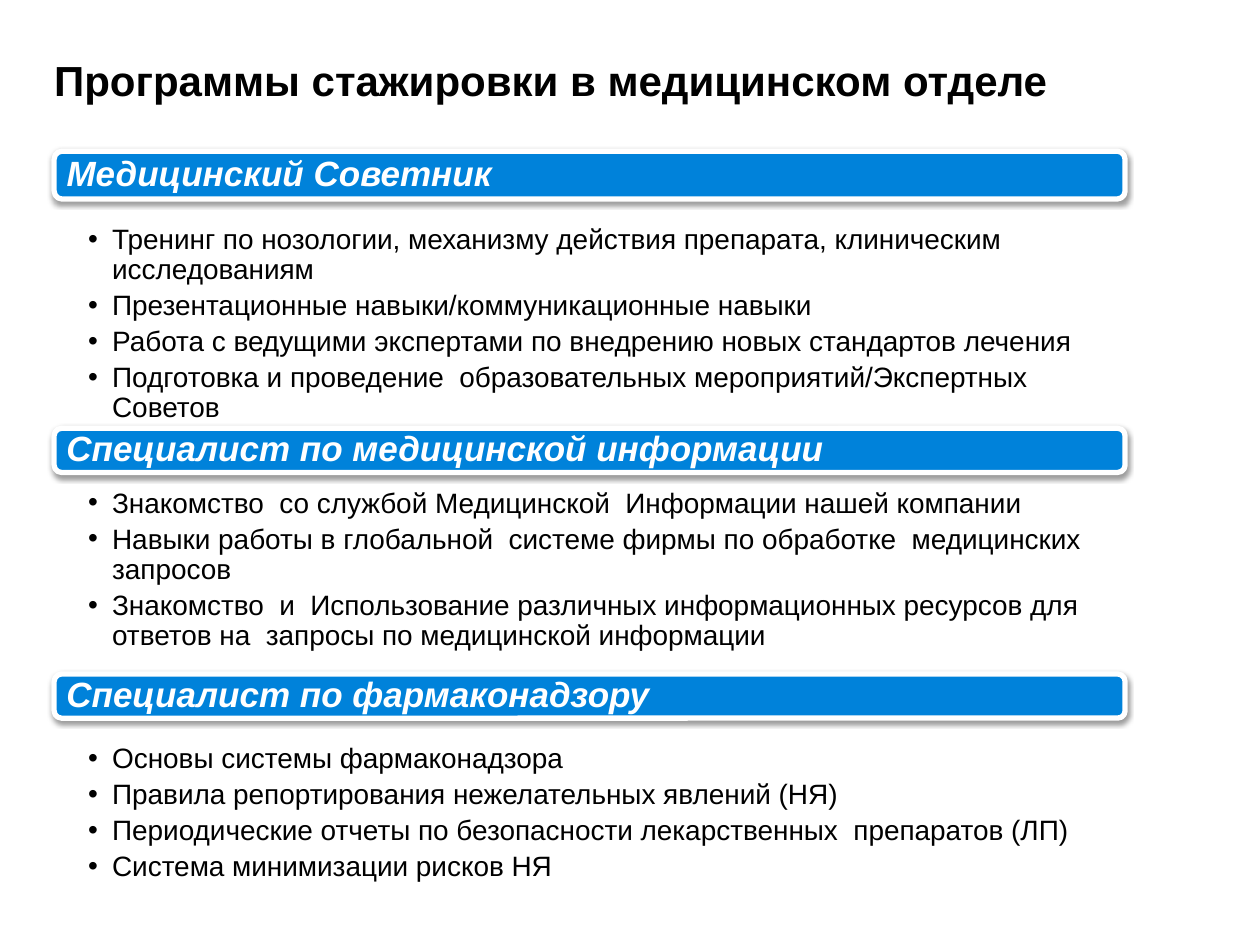
from dataclasses import dataclass

from lxml import etree
from pptx import Presentation
from pptx.dml.color import RGBColor
from pptx.enum.shapes import MSO_SHAPE
from pptx.enum.text import MSO_ANCHOR, MSO_AUTO_SIZE, PP_ALIGN
from pptx.oxml.ns import qn
from pptx.slide import Slide
from pptx.text.text import TextFrame, _Paragraph
from pptx.util import Inches, Pt

ROUNDED = MSO_SHAPE.ROUNDED_RECTANGLE
TOP, MIDDLE = MSO_ANCHOR.TOP, MSO_ANCHOR.MIDDLE
LEFT = PP_ALIGN.LEFT
NO_AUTOFIT = MSO_AUTO_SIZE.NONE
FONT = "Arial"
COLORS = {"text": "000000", "bar": "0082DA", "light": "FFFFFF", "shadow": "000000"}
SLIDE_WIDTH, SLIDE_HEIGHT = Inches(10), Inches(7.5)
MARGIN, CONTENT_WIDTH = 4.3, 85
HANGING = Inches(0.19)


@dataclass
class Section:
    """A heading bar and its bullets, with lengths in percent of slide height."""

    heading: str
    bar_top: float
    bar_height: float
    list_top: float
    list_height: float
    bullets: list[str]


SECTIONS = [
    Section("Медицинский Советник", 16, 5.07, 23.6, 19.33, [
        "Тренинг по нозологии, механизму действия препарата, клиническим исследованиям",
        "Презентационные навыки/коммуникационные навыки",
        "Работа с ведущими экспертами по внедрению новых стандартов лечения",
        "Подготовка и проведение  образовательных мероприятий/Экспертных Советов",
    ]),
    Section("Специалист по медицинской информации", 45.33, 4.67, 51.47, 18.67, [
        "Знакомство  со службой Медицинской  Информации нашей компании",
        "Навыки работы в глобальной  системе фирмы по обработке  медицинских запросов",
        "Знакомство  и  Использование различных информационных ресурсов для "
        "ответов на  запросы по медицинской информации",
    ]),
    Section("Специалист по фармаконадзору", 71.33, 4.67, 78.53, 16.27, [
        "Основы системы фармаконадзора",
        "Правила репортирования нежелательных явлений (НЯ)",
        "Периодические отчеты по безопасности лекарственных  препаратов (ЛП)",
        "Система минимизации рисков НЯ",
    ]),
]


def color(name: str) -> RGBColor:
    """Look up a palette colour."""
    return RGBColor.from_string(COLORS[name])


def area(top: float, height: float, width: float = CONTENT_WIDTH) -> tuple[int, ...]:
    """Turn percentages into a left, top, width, height tuple at the margin."""
    return (
        int(SLIDE_WIDTH * MARGIN / 100),
        int(SLIDE_HEIGHT * top / 100),
        int(SLIDE_WIDTH * width / 100),
        int(SLIDE_HEIGHT * height / 100),
    )


def set_frame(frame: TextFrame, anchor: MSO_ANCHOR, left: float, right: float, vertical: float) -> None:
    """Set wrapping, anchor and insets in inches."""
    frame.word_wrap = True
    frame.auto_size = NO_AUTOFIT
    frame.vertical_anchor = anchor
    frame.margin_left, frame.margin_right = Inches(left), Inches(right)
    frame.margin_top = frame.margin_bottom = Inches(vertical)


def format_paragraph(paragraph: _Paragraph, size: float, color_name: str, bold: bool = False,
                     italic: bool = False, line_spacing: float = 0.9) -> None:
    """Align a paragraph and style its runs."""
    paragraph.alignment = LEFT
    paragraph.line_spacing = line_spacing
    for run in paragraph.runs:
        run.font.name = FONT
        run.font.size = Pt(size)
        run.font.bold = bold
        run.font.italic = italic
        run.font.color.rgb = color(color_name)


def add_bullet(paragraph: _Paragraph) -> None:
    """Give a paragraph a hanging bullet."""
    properties = paragraph._p.get_or_add_pPr()
    properties.set("marL", str(HANGING))
    properties.set("indent", str(-HANGING))
    etree.SubElement(properties, qn("a:buFont"), typeface=FONT)
    etree.SubElement(properties, qn("a:buChar"), char="•")


def add_title(slide: Slide, text: str) -> None:
    """Fill and place the title placeholder."""
    title = slide.shapes.title
    title.left, title.top, title.width, title.height = area(5.73, 8.4, 80.6)
    title.text_frame.text = text
    set_frame(title.text_frame, TOP, 0, 0, 0)
    format_paragraph(title.text_frame.paragraphs[0], 24, "text", bold=True, line_spacing=1.0)


def add_bar(slide: Slide, section: Section) -> None:
    """Draw a heading bar with a soft shadow below it."""
    bar = slide.shapes.add_shape(ROUNDED, *area(section.bar_top, section.bar_height))
    bar.fill.solid()
    bar.fill.fore_color.rgb = color("bar")
    bar.line.color.rgb = color("light")
    bar.line.width = Pt(3)
    bar.shadow.inherit = False
    effects = bar._element.spPr.find(qn("a:effectLst"))
    shadow = etree.SubElement(effects, qn("a:outerShdw"), blurRad=str(Pt(3.1)),
                              dist=str(Pt(1.6)), dir="5400000", rotWithShape="0")
    tint = etree.SubElement(shadow, qn("a:srgbClr"), val=COLORS["shadow"])
    etree.SubElement(tint, qn("a:alpha"), val="38000")
    bar.text_frame.text = section.heading
    set_frame(bar.text_frame, MIDDLE, 0.08, 0.08, 0)
    format_paragraph(bar.text_frame.paragraphs[0], 20, "light", bold=True, italic=True)


def add_list(slide: Slide, section: Section) -> None:
    """Write the bullets of a section."""
    box = slide.shapes.add_textbox(*area(section.list_top, section.list_height))
    frame = box.text_frame
    set_frame(frame, TOP, 0.27, 0.12, 0.02)
    frame.text = "\n".join(section.bullets)
    for paragraph in frame.paragraphs:
        add_bullet(paragraph)
        paragraph.space_after = Pt(3.3)
        format_paragraph(paragraph, 16, "text")


def main() -> None:
    """Build the internship programme slide."""
    presentation = Presentation()
    presentation.slide_width, presentation.slide_height = SLIDE_WIDTH, SLIDE_HEIGHT
    slide = presentation.slides.add_slide(presentation.slide_layouts[5])
    add_title(slide, "Программы стажировки в медицинском отделе")
    for section in SECTIONS:
        add_bar(slide, section)
        add_list(slide, section)
    presentation.save("out.pptx")


if __name__ == "__main__":
    main()
